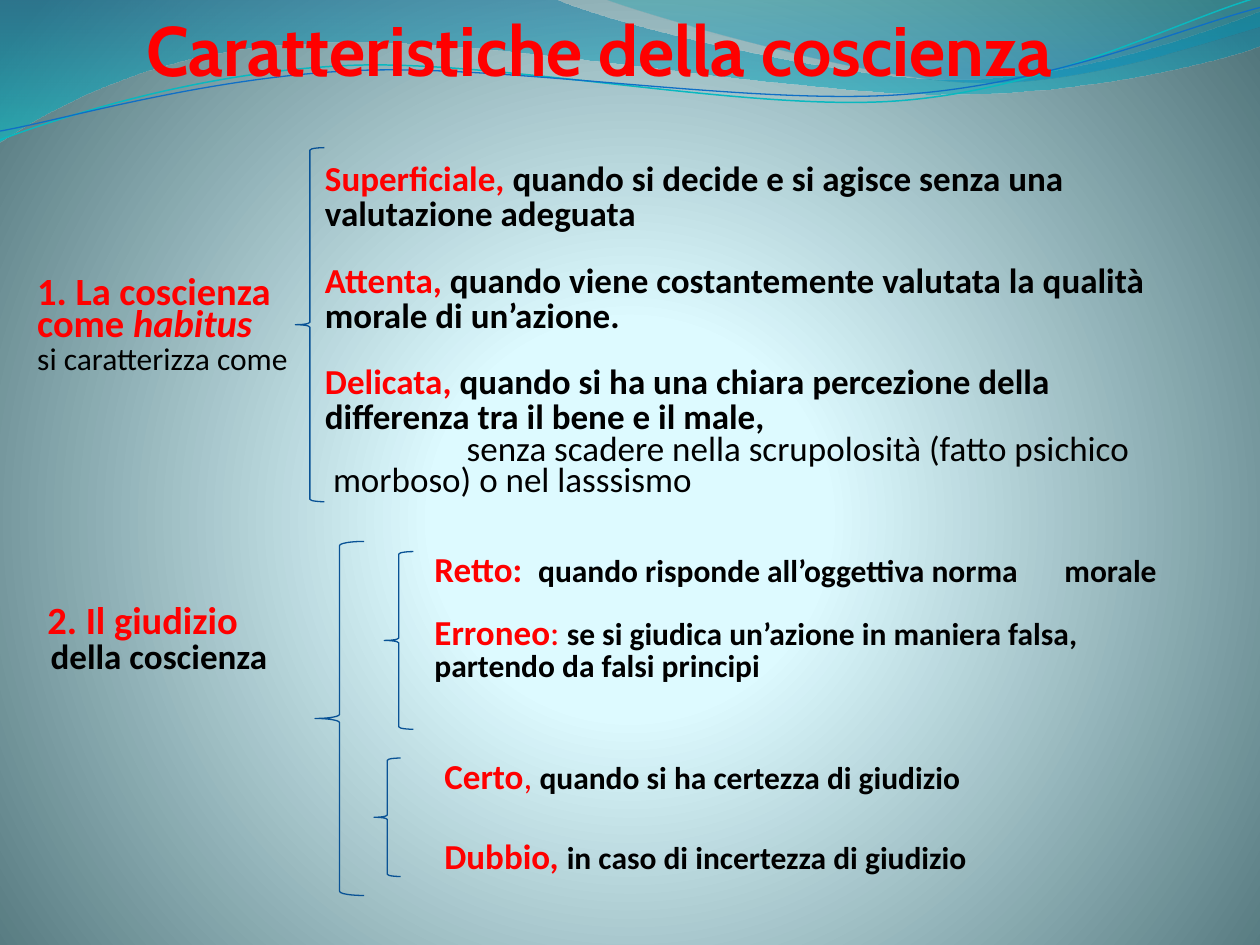
import math

import pptx
import pptx.dml.color
import pptx.enum.shapes
import pptx.enum.text
import pptx.oxml
import pptx.oxml.ns
import pptx.util

Pt = pptx.util.Pt
RED, BLACK, BRACE_BLUE = "FF0000", "000000", "095295"
LINEAR = '<a:lin {ns} ang="5400000" scaled="1"/>'
RADIAL = ('<a:path {ns} path="circle"><a:fillToRect l="10000" t="110000" '
          'r="10000" b="100000"/></a:path>')


def color(value):
    return pptx.dml.color.RGBColor.from_string(value)


def span(text, **style):
    return text, style


def para(*spans, **layout):
    return spans, layout


def turn(point, center, degrees):
    angle = math.radians(degrees)
    x, y = point[0] - center[0], point[1] - center[1]
    return (center[0] + x * math.cos(angle) - y * math.sin(angle),
            center[1] + x * math.sin(angle) + y * math.cos(angle))


class Slide:
    def __init__(self, deck, font="Calibri", size=20, line_width=0.75):
        self.page = deck.slides.add_slide(deck.slide_layouts[6])
        self.font, self.size, self.line_width = font, size, line_width

    def gradient(self, fill, owner, stops, direction):
        fill.gradient()
        node = owner.xpath(".//a:gradFill")[0]
        for child in list(node):
            node.remove(child)
        namespace = pptx.oxml.ns.nsdecls("a")
        marks = "".join(
            f'<a:gs pos="{place * 1000}"><a:srgbClr val="{value}">'
            f'<a:alpha val="{opacity * 1000}"/></a:srgbClr></a:gs>'
            for place, value, opacity in stops)
        node.append(pptx.oxml.parse_xml(f"<a:gsLst {namespace}>{marks}</a:gsLst>"))
        node.append(pptx.oxml.parse_xml(direction.format(ns=namespace)))

    def background(self, stops):
        self.gradient(self.page.background.fill, self.page.element, stops, RADIAL)

    def outline(self, shape, value, width):
        shape.fill.background()
        shape.line.color.rgb = color(value)
        shape.line.width = Pt(width)

    def curve(self, start, segments, closed=False):
        points = [(Pt(x), Pt(y)) for x, y in [start] + sum(segments, [])]
        builder = self.page.shapes.build_freeform(*points[0], scale=1.0)
        builder.add_line_segments(points[1:], close=closed)
        shape = builder.convert_to_shape()
        shape.shadow.inherit = False
        lines = iter(shape.element.xpath(".//a:lnTo"))
        for segment in segments:
            edges = [next(lines) for _ in segment]
            if len(edges) == 3:
                bezier = pptx.oxml.parse_xml(
                    f"<a:cubicBezTo {pptx.oxml.ns.nsdecls('a')}/>")
                edges[0].addprevious(bezier)
                for edge in edges:
                    bezier.append(edge[0])
                    edge.getparent().remove(edge)
        return shape

    def wave(self, start, segments, stops):
        shape = self.curve(start, segments, closed=True)
        self.gradient(shape.fill, shape.element, stops, LINEAR)
        shape.line.fill.background()

    def ribbon(self, start, segments, value, width, center, tilt=2.7):
        level = [[turn(point, center, tilt) for point in segment]
                 for segment in segments]
        shape = self.curve(turn(start, center, tilt), level)
        shape.rotation = 360 - tilt
        self.outline(shape, value, width)

    def brace(self, left, top, width, height):
        shape = self.page.shapes.add_shape(
            pptx.enum.shapes.MSO_SHAPE.LEFT_BRACE,
            Pt(left), Pt(top), Pt(width), Pt(height))
        shape.shadow.inherit = False
        self.outline(shape, BRACE_BLUE, self.line_width)

    def text(self, left, top, width, height, paras):
        box = self.page.shapes.add_textbox(Pt(left), Pt(top), Pt(width), Pt(height))
        frame = box.text_frame
        frame.word_wrap = True
        frame.auto_size = pptx.enum.text.MSO_AUTO_SIZE.SHAPE_TO_FIT_TEXT
        for index, (spans, layout) in enumerate(paras):
            paragraph = frame.add_paragraph() if index else frame.paragraphs[0]
            self.fill_para(paragraph, spans, **layout)

    def fill_para(self, paragraph, spans, spacing=None, before=0, after=0,
                  align=None, margin=0, indent=0):
        if spacing:
            paragraph.line_spacing = Pt(spacing)
        paragraph.space_before, paragraph.space_after = Pt(before), Pt(after)
        paragraph.alignment = align
        if margin or indent:
            properties = paragraph._p.get_or_add_pPr()
            properties.set("marL", str(Pt(margin)))
            properties.set("indent", str(Pt(indent)))
        for text, style in spans:
            for index, part in enumerate(text.split("\n")):
                if index:
                    paragraph.add_line_break()
                self.add_span(paragraph, part, **style)

    def add_span(self, paragraph, text, size=None, ink=BLACK, bold=True,
                 italic=False, font=None):
        run = paragraph.add_run()
        run.text = text
        run.font.name = font or self.font
        run.font.size = Pt(size or self.size)
        run.font.bold, run.font.italic = bold, italic
        run.font.color.rgb = color(ink)


def main():
    deck = pptx.Presentation()
    deck.slide_width, deck.slide_height = Pt(720), Pt(540)
    slide = Slide(deck)

    slide.background([(0, "DEFBFF", 100), (25, "DDFAFF", 100), (100, "52767C", 100)])
    slide.wave((0, 0), [
        [(316.8, -0.7)], [(342.7, 12.2), (478.1, 45.4), (545.8, 45.4)],
        [(614.2, 45.4), (689.8, 18.7), (720, 6.5)], [(720.7, 25.9)],
        [(707.8, 31.7), (626.4, 54.7), (537.1, 54)],
        [(447.8, 54), (275, 20.2), (185, 24.5)],
        [(92.9, 25.9), (33.1, 59.8), (-0.7, 81.4)], [(0, 0)],
    ], [(0, "0074A1", 45), (100, "00C6CF", 55)])
    slide.wave((344.9, -0.7), [
        [(366.5, 7.9), (491, 44.6), (553.7, 46.8)],
        [(616.3, 49.7), (691.9, 23), (720, 15.1)], [(720, 0)], [(344.9, -0.7)],
    ], [(0, "00A1A9", 30), (80, "008BBF", 45)])
    slide.ribbon((0, 79.9), [
        [(34.6, 67), (113.8, 41), (199.4, 37.4)],
        [(284.4, 33.8), (427, 64.1), (513.4, 57.6)],
        [(599.8, 51.1), (675.4, 10.8), (718.6, -1.4)],
    ], "0AB8BF", 0.85, center=(359.3, 41.4))
    slide.ribbon((0, 74.9), [
        [(33.8, 69.1), (118.1, 43.9), (203.8, 40.3)],
        [(290.2, 36.7), (429.8, 60.5), (516.2, 54)],
        [(601.9, 48.2), (677.5, 15.1), (720, 4.3)],
    ], "0F6FC6", 0.75, center=(359.6, 42.5))

    slide.text(76.5, 0, 589.7, 55.4, [
        para(span("Caratteristiche della coscienza", size=40, ink=RED, font="Cabin"))])
    slide.text(14.2, 157.5, 187.2, 62, [
        para(span("1. La coscienza", size=22, ink=RED), spacing=18),
        para(span("come ", size=22, ink=RED),
             span("habitus", size=22, ink=RED, italic=True), spacing=18),
        para(span("si caratterizza come", size=18, bold=False), spacing=18)])
    slide.text(178.6, 90, 541.4, 200.9, [
        para(span("Superficiale, ", ink=RED),
             span("quando si decide e si agisce senza una\nvalutazione adeguata"),
             spacing=20, after=18),
        para(span("Attenta, ", ink=RED),
             span("quando viene costantemente valutata la qualità\nmorale di un’azione."),
             spacing=20, after=18),
        para(span("Delicata, ", ink=RED),
             span("quando si ha una chiara percezione della\n"
                  "differenza tra il bene e il male,"), spacing=20),
        para(span("senza scadere nella scrupolosità (fatto psichico "
                  "morboso) o nel lasssismo", bold=False),
             spacing=18, margin=4.6, indent=76.4)])
    slide.brace(168.8, 84.4, 16.6, 202.3)
    slide.text(20, 343.2, 141.8, 67.7, [
        para(span("2. Il giudizio", size=22, ink=RED), spacing=20),
        para(span("della coscienza"), spacing=20,
             align=pptx.enum.text.PP_ALIGN.CENTER)])
    slide.brace(180, 309.4, 28.1, 202.3)
    slide.brace(219.6, 315.2, 16.6, 101.5)
    slide.text(241.2, 315.1, 434.2, 97.9, [
        para(span("Retto:  ", ink=RED),
             span("quando risponde all’oggettiva norma \tmorale", size=18), spacing=18),
        para(span("Erroneo", ink=RED), span(":", ink=RED, bold=False),
             span(" ", size=18, bold=False),
             span("se si giudica un’azione in maniera falsa, "
                  "partendo da falsi principi", size=18), spacing=18, before=18)])
    slide.brace(213.8, 433.2, 15.1, 67.7)
    slide.text(246.8, 427.5, 378, 77.8, [
        para(span("Certo", ink=RED), span(",", ink=RED, bold=False),
             span(" ", size=18, bold=False),
             span("quando si ha certezza di giudizio", size=18)),
        para(span("Dubbio, ", ink=RED),
             span("in caso di incertezza di giudizio", size=18), before=22)])
    deck.save("out.pptx")


if __name__ == "__main__":
    main()
